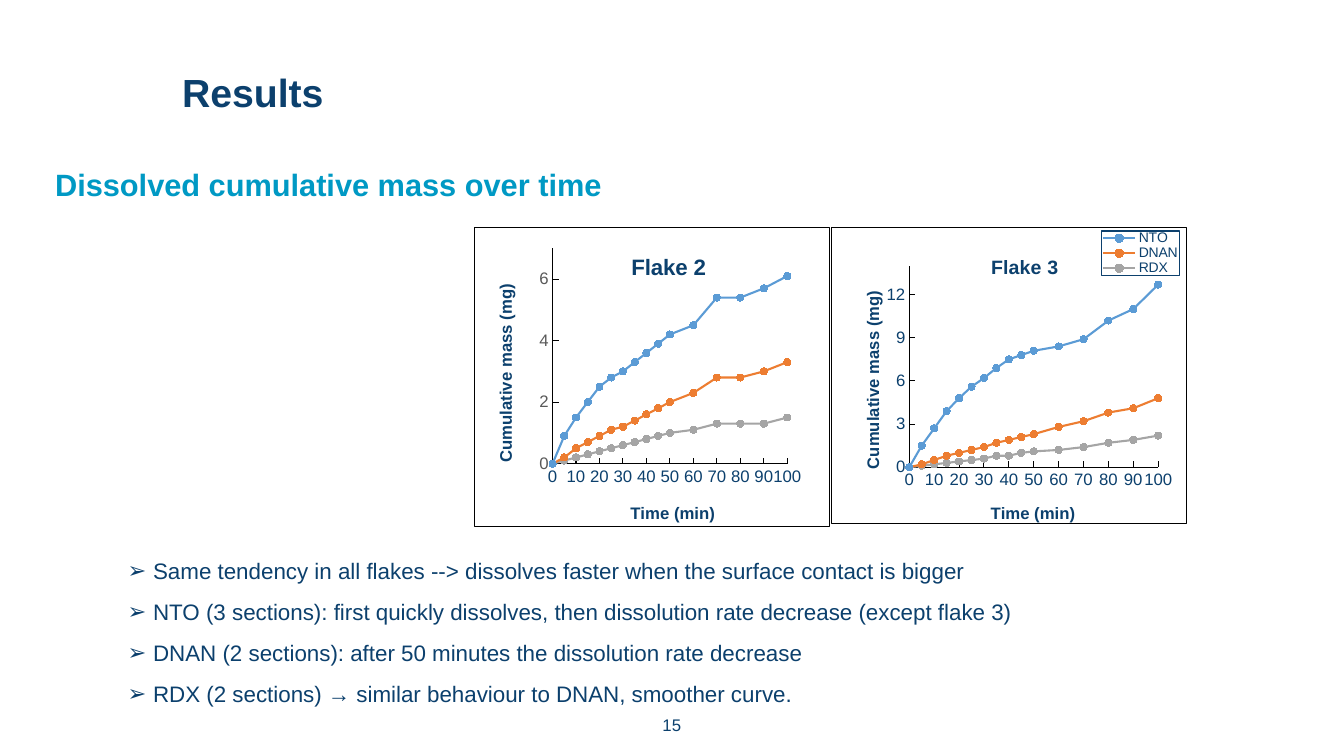
"""Build the results slide with two dissolved-mass charts and their findings."""
import dataclasses
import typing

import lxml.etree
import pptx
import pptx.chart.data
import pptx.dml.color
import pptx.enum.chart
import pptx.enum.text
import pptx.oxml
import pptx.oxml.ns
import pptx.util

Cm = pptx.util.Cm
Pt = pptx.util.Pt
qn = pptx.oxml.ns.qn

COLORS = {
    "navy": "0C406D", "cyan": "0099C4", "gray": "595959", "black": "000000", "white": "FFFFFF",
    "NTO": "5B9BD5", "DNAN": "ED7D31", "RDX": "A5A5A5",
}
MINUTES = [*range(0, 50, 5), *range(50, 101, 10)]
CHART_TOP, CHART_W, CHART_H = 5.72, 8.99, 7.57
Pair = tuple[float, float]


@dataclasses.dataclass
class TextBlock:
    box: tuple[float, float, float, float]
    lines: list[str]
    size: int
    color: str = "navy"
    bold: bool = False
    align: str = "LEFT"
    anchor: str = "MIDDLE"
    bullet: str = ""


@dataclasses.dataclass
class FlakeChart:
    title: str
    title_size: int
    left: float
    top_mass: int
    step: int
    number_format: str
    mass_color: str
    plot: tuple[float, float, float, float]
    title_at: Pair
    time_at: Pair
    mass_at: Pair
    masses: dict[str, list[float]]
    legend: bool = False


TEXTS = [
    TextBlock((16.23, 17.81, 1.4, 0.91), ["15"], 12, align="CENTER"),
    TextBlock((4.34, 1.12, 28.4, 2.39), ["Results"], 28, bold=True),
    TextBlock((1.14, 3.53, 31.6, 2.21), ["Dissolved cumulative mass over time"], 22, "cyan", True),
    TextBlock((2.97, 13.92, 25.78, 4.6), [
        "Same tendency in all flakes --> dissolves faster when the surface contact is bigger",
        "NTO (3 sections): first quickly dissolves, then dissolution rate decrease (except flake 3)",
        "DNAN (2 sections): after 50 minutes the dissolution rate decrease",
        "RDX (2 sections) → similar behaviour to DNAN, smoother curve.",
    ], 16, anchor="TOP", bullet="➢"),
]
CHARTS = [
    FlakeChart("Flake 3", 14, 20.93, 14, 3, "0", "navy", (0.22, 0.13, 0.7, 0.68),
               (0.44, 0.08), (0.44, 0.92), (0.08, 0.21), {
        "NTO": [0, 1.5, 2.7, 3.9, 4.8, 5.6, 6.2, 6.9, 7.5, 7.8, 8.1, 8.4, 8.9, 10.2, 11, 12.7],
        "DNAN": [0, 0.2, 0.5, 0.8, 1, 1.2, 1.4, 1.7, 1.9, 2.1, 2.3, 2.8, 3.2, 3.8, 4.1, 4.8],
        "RDX": [0, 0.1, 0.2, 0.3, 0.4, 0.5, 0.6, 0.8, 0.8, 1, 1.1, 1.2, 1.4, 1.7, 1.9, 2.2],
    }, legend=True),
    FlakeChart("Flake 2", 16, 11.94, 7, 2, "General", "gray", (0.22, 0.07, 0.66, 0.72),
               (0.43, 0.07), (0.43, 0.91), (0.05, 0.18), {
        "NTO": [0, 0.9, 1.5, 2, 2.5, 2.8, 3, 3.3, 3.6, 3.9, 4.2, 4.5, 5.4, 5.4, 5.7, 6.1],
        "DNAN": [0, 0.2, 0.5, 0.7, 0.9, 1.1, 1.2, 1.4, 1.6, 1.8, 2, 2.3, 2.8, 2.8, 3, 3.3],
        "RDX": [0, 0.1, 0.2, 0.3, 0.4, 0.5, 0.6, 0.7, 0.8, 0.9, 1, 1.1, 1.3, 1.3, 1.3, 1.5],
    }),
]


def rgb(name: str) -> pptx.dml.color.RGBColor:
    return pptx.dml.color.RGBColor.from_string(COLORS[name])


def assign(target: typing.Any, values: dict[str, typing.Any]) -> None:
    for name, value in values.items():
        setattr(target, name, value)


def set_font(font: typing.Any, size: int, color: str = "navy", bold: bool = False) -> None:
    assign(font, {"name": "Arial", "size": Pt(size), "bold": bold})
    font.color.rgb = rgb(color)


def set_line(line: typing.Any, color: str, width: float) -> None:
    line.color.rgb = rgb(color)
    line.width = Pt(width)


def add_text(slide: typing.Any, block: TextBlock) -> None:
    tf = slide.shapes.add_textbox(*map(Cm, block.box)).text_frame
    assign(tf, {"word_wrap": True, "vertical_anchor": pptx.enum.text.MSO_ANCHOR[block.anchor]})
    for i, line in enumerate(block.lines):
        p = tf.paragraphs[0] if i == 0 else tf.add_paragraph()
        p.alignment = pptx.enum.text.PP_ALIGN[block.align]
        p.space_before = Pt(10 if i else 0)
        if block.bullet:
            pPr = p._p.get_or_add_pPr()
            assign_indent = {"marL": Cm(0.64), "indent": -Cm(0.64)}
            for name, value in assign_indent.items():
                pPr.set(name, str(value))
            lxml.etree.SubElement(pPr, qn("a:buFont")).set("typeface", "Arial")
            lxml.etree.SubElement(pPr, qn("a:buChar")).set("char", block.bullet)
        r = p.add_run()
        r.text = line
        set_font(r.font, block.size, block.color, block.bold)


def set_layout(element: typing.Any, index: int, frame: typing.Sequence[float], inner: bool = False) -> None:
    for old in element.findall(qn("c:layout")):
        element.remove(old)
    layout = lxml.etree.Element(qn("c:layout"))
    manual = lxml.etree.SubElement(layout, qn("c:manualLayout"))
    values = {"layoutTarget": "inner"} if inner else {}
    values |= {"xMode": "edge", "yMode": "edge"} | dict(zip("xywh", frame))
    for tag, value in values.items():
        lxml.etree.SubElement(manual, qn(f"c:{tag}")).set("val", str(value))
    element.insert(index, layout)


def add_frame(previous: typing.Any, color: str, fill: str) -> None:
    previous.addnext(pptx.oxml.parse_xml(
        f'<c:spPr {pptx.oxml.ns.nsdecls("c", "a")}>'
        f'<a:solidFill><a:srgbClr val="{COLORS[fill]}"/></a:solidFill>'
        f'<a:ln w="{Pt(0.75)}"><a:solidFill><a:srgbClr val="{COLORS[color]}"/></a:solidFill></a:ln></c:spPr>'))


def set_title(title: typing.Any, text: str, size: int, at: Pair, rotated: bool = False) -> None:
    tf = title.text_frame
    tf.text = text
    set_font(tf.paragraphs[0].runs[0].font, size, bold=True)
    tf._txBody.find(qn("a:bodyPr")).set("rot", "-5400000" if rotated else "0")
    set_layout(title._element, 1, at)


def add_flake_chart(slide: typing.Any, flake: FlakeChart) -> None:
    data = pptx.chart.data.XyChartData()
    for name, masses in flake.masses.items():
        series = data.add_series(name)
        for minute, mass in zip(MINUTES, masses):
            series.add_data_point(minute, mass)
    xl = pptx.enum.chart
    chart = slide.shapes.add_chart(
        xl.XL_CHART_TYPE.XY_SCATTER_LINES, Cm(flake.left), Cm(CHART_TOP), Cm(CHART_W), Cm(CHART_H), data).chart
    set_font(chart.font, 10, "black")
    assign(chart, {"has_title": True, "has_legend": flake.legend})
    set_title(chart.chart_title, flake.title, flake.title_size, flake.title_at)
    plot_area = chart._chartSpace.chart.plotArea
    set_layout(plot_area, 0, flake.plot, inner=True)
    add_frame(chart._chartSpace.chart, "black", "white")

    for axis, text, at, top, step, color, fmt in (
        (chart.category_axis, "Time (min)", flake.time_at, 100, 10, "navy", "General"),
        (chart.value_axis, "Cumulative mass (mg)", flake.mass_at, flake.top_mass, flake.step,
         flake.mass_color, flake.number_format),
    ):
        assign(axis, {
            "minimum_scale": 0, "maximum_scale": top, "major_unit": step, "has_major_gridlines": False,
            "major_tick_mark": xl.XL_TICK_MARK.INSIDE, "minor_tick_mark": xl.XL_TICK_MARK.NONE})
        assign(axis.tick_labels, {"number_format": fmt, "number_format_is_linked": False})
        set_font(axis.tick_labels.font, 12, color)
        set_line(axis.format.line, "black", 0.75)
        set_title(axis.axis_title, text, 12, at, rotated=axis is chart.value_axis or text.startswith("Cum"))

    plot = chart.plots[0]
    plot.vary_by_categories = False
    for series in plot.series:
        set_line(series.format.line, series.name, 1.5)
        assign(series.marker, {"style": xl.XL_MARKER_STYLE.CIRCLE, "size": 5})
        series.marker.format.fill.solid()
        series.marker.format.fill.fore_color.rgb = rgb(series.name)
        set_line(series.marker.format.line, series.name, 0.75)

    if flake.legend:
        legend = chart.legend
        assign(legend, {"position": xl.XL_LEGEND_POSITION.RIGHT, "include_in_layout": False})
        set_font(legend.font, 10)
        set_layout(legend._element, 1, (0.76, 0.01, 0.22, 0.15))
        add_frame(legend._element.find(qn("c:overlay")), "navy", "white")


def main() -> None:
    prs = pptx.Presentation()
    assign(prs, {"slide_width": Cm(33.87), "slide_height": Cm(19.05)})
    slide = prs.slides.add_slide(prs.slide_layouts[6])
    for block in TEXTS:
        add_text(slide, block)
    for flake in CHARTS:
        add_flake_chart(slide, flake)
    prs.save("out.pptx")


if __name__ == "__main__":
    main()
